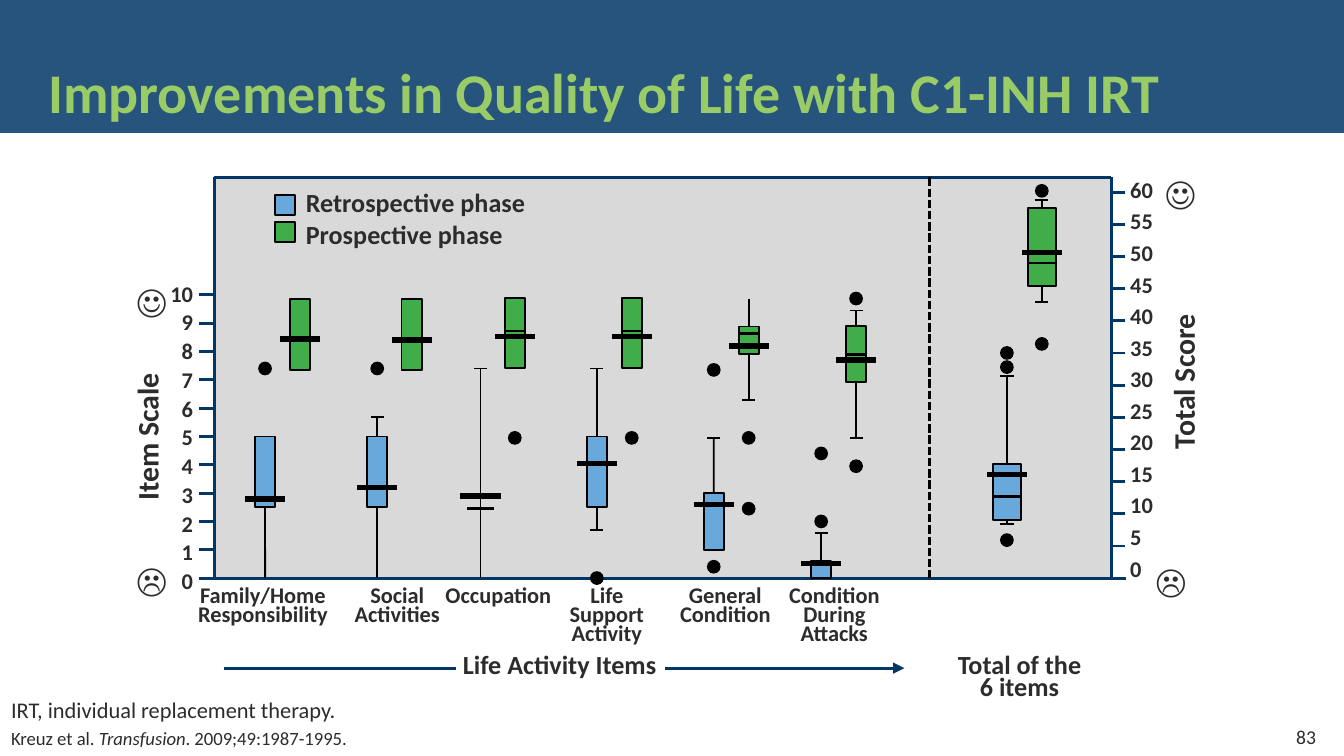
from dataclasses import dataclass

from lxml import etree
from pptx import Presentation
from pptx.dml.color import RGBColor
from pptx.enum.dml import MSO_LINE
from pptx.enum.shapes import MSO_CONNECTOR, MSO_SHAPE
from pptx.enum.text import MSO_ANCHOR, MSO_AUTO_SIZE, PP_ALIGN
from pptx.oxml.ns import qn
from pptx.util import Cm, Pt

STRAIGHT = MSO_CONNECTOR.STRAIGHT
RECTANGLE, OVAL = MSO_SHAPE.RECTANGLE, MSO_SHAPE.OVAL
LEFT, CENTER, RIGHT = PP_ALIGN.LEFT, PP_ALIGN.CENTER, PP_ALIGN.RIGHT
TOP, MIDDLE, BOTTOM = MSO_ANCHOR.TOP, MSO_ANCHOR.MIDDLE, MSO_ANCHOR.BOTTOM
DASH = MSO_LINE.SQUARE_DOT
NAVY, INK, BLACK, GRAY = "003767", "2C2C2C", "000000", "D9D9D9"
BLUE, GREEN, LIME = "68A8DB", "41AD49", "99CC67"
ITEM_UNIT, TOTAL_UNIT = 0.535, 0.1215


@dataclass
class Group:
    x: float
    color: str
    quartiles: tuple
    mean: float
    median: float = None
    whiskers: tuple = (None, None)
    outliers: tuple = ()


ITEM_GROUPS = [
    Group(0.96, BLUE, (2.5, 5), 2.8, whiskers=(0, None), outliers=(7.4,)),
    Group(3.08, BLUE, (2.5, 5), 3.2, whiskers=(0, 5.7), outliers=(7.4,)),
    Group(5.03, BLUE, None, 2.9, 2.45, (0, 7.4)),
    Group(7.23, BLUE, (2.5, 5), 4.05, whiskers=(1.7, 7.4), outliers=(0,)),
    Group(9.44, BLUE, (1, 3), 2.6, whiskers=(None, 4.95), outliers=(7.35, 0.4)),
    Group(11.47, BLUE, (0, 0.6), 0.52, whiskers=(None, 1.6), outliers=(4.4, 2)),
    Group(1.62, GREEN, (7.36, 9.87), 8.44),
    Group(3.73, GREEN, (7.36, 9.87), 8.4),
    Group(5.68, GREEN, (7.4, 9.9), 8.53, 8.72, outliers=(4.95,)),
    Group(7.89, GREEN, (7.4, 9.9), 8.53, 8.72, outliers=(4.95,)),
    Group(10.1, GREEN, (7.9, 8.88), 8.2, 8.63, (6.3, 9.87), (4.95, 2.45)),
    Group(12.13, GREEN, (6.92, 8.9), 7.7, 7.9, (4.95, 9.45), (9.87, 3.95)),
]
TOTAL_GROUPS = [
    Group(14.98, BLUE, (9, 17.8), 16.1, 12.7, (8.4, 31.4), (35, 32.8, 5.9)),
    Group(15.64, GREEN, (45.4, 57.5), 50.6, 49, (42.9, 58.8), (36.4, 60.2)),
]


def color(hex_code):
    return RGBColor.from_string(hex_code)


def add_shape(page, kind, frame, fill, line=None):
    shape = page.shapes.add_shape(kind, *map(Cm, frame))
    shape.shadow.inherit = False
    shape.fill.solid()
    shape.fill.fore_color.rgb = color(fill)
    if line:
        shape.line.color.rgb = color(line)
        shape.line.width = Pt(1)
    else:
        shape.line.fill.background()
    return shape


def add_line(page, x1, y1, x2, y2, width=1.5, ink=NAVY):
    line = page.shapes.add_connector(STRAIGHT, Cm(x1), Cm(y1), Cm(x2), Cm(y2))
    line.line.color.rgb = color(ink)
    line.line.width = Pt(width)
    etree.SubElement(line.element.spPr, qn("a:effectLst"))
    return line


def add_bar(page, x, y, length, width):
    return add_line(page, x - length / 2, y, x + length / 2, y, width, BLACK)


def add_span(para, text, size, ink=INK, bold=False, italic=False):
    span = para.add_run()
    span.text = text
    font = span.font
    font.name, font.size, font.bold, font.italic = "Calibri", Pt(size), bold, italic
    font.color.rgb = color(ink)
    return span


def add_text(page, frame, lines, size, bold=True, align=LEFT, anchor=TOP,
             wrap=False, after=None, spacing=None, rotation=0):
    box = page.shapes.add_textbox(*map(Cm, frame))
    box.rotation = rotation
    text = box.text_frame
    text.word_wrap, text.vertical_anchor = wrap, anchor
    for index, line in enumerate(lines):
        para = text.add_paragraph() if index else text.paragraphs[0]
        para.alignment, para.line_spacing = align, spacing
        if after:
            para.space_after = Pt(after)
        add_span(para, line, size, bold=bold)
    return box


def draw_header(page, left, top, width, height):
    band = add_shape(page, RECTANGLE, (left, top, width, height), NAVY)
    fill = band.element.spPr.find(qn("a:solidFill"))
    etree.SubElement(fill[0], qn("a:alpha"), val="85000")
    title = page.shapes.title
    title.element.addprevious(band.element)
    title.left, title.top = Cm(left + 0.66), Cm(top + 0.64)
    title.width, title.height = Cm(22.71), Cm(height - 0.64)
    text = title.text_frame
    text.auto_size, text.vertical_anchor = MSO_AUTO_SIZE.NONE, BOTTOM
    para = text.paragraphs[0]
    para.alignment, para.line_spacing = LEFT, 0.9
    span = add_span(para, "Improvements in Quality of Life with C1-INH IRT", 30, LIME, True)
    effects = etree.Element(qn("a:effectLst"))
    shadow = etree.SubElement(effects, qn("a:outerShdw"), blurRad="38100",
                              dist="38100", dir="2700000", algn="tl")
    shade = etree.SubElement(shadow, qn("a:srgbClr"), val=BLACK)
    etree.SubElement(shade, qn("a:alpha"), val="43000")
    span.font._element.find(qn("a:solidFill")).addnext(effects)


def draw_group(page, group, left, floor, unit, limit, box_width):
    x = left + group.x
    low, high = group.whiskers
    stem = None
    if low is not None or high is not None:
        start = high if high is not None else group.quartiles[0]
        end = low if low is not None else group.quartiles[1]
        stem = add_line(page, x, floor - start * unit, x, floor - end * unit, 1, BLACK)
        for value in group.whiskers:
            if value and value < limit:
                add_bar(page, x, floor - value * unit, 0.25, 1)
    if group.quartiles:
        bottom, top = group.quartiles
        frame = (x - box_width / 2, floor - top * unit, box_width, (top - bottom) * unit)
        box = add_shape(page, RECTANGLE, frame, group.color, BLACK)
        if stem and high is None:
            stem.begin_connect(box, 2)
        if stem and low is None:
            stem.end_connect(box, 0)
    if group.median is not None:
        length = box_width if group.quartiles else 0.5
        add_bar(page, x, floor - group.median * unit, length, 1.5)
    add_bar(page, x, floor - group.mean * unit, 0.76, 3)
    for value in group.outliers:
        add_shape(page, OVAL, (x - 0.13, floor - value * unit - 0.13, 0.26, 0.26), BLACK)


def draw_plot(page, left, top, width, height):
    right, floor = left + width, top + height
    add_shape(page, RECTANGLE, (left, top, width, height), GRAY)
    for x in (left, right):
        add_line(page, x, top, x, floor)
    add_line(page, left, top, right, top)
    add_line(page, left - 0.28, floor, right + 0.28, floor)
    for value in range(1, 11):
        y = floor - value * ITEM_UNIT
        add_line(page, left - 0.28, y, left, y)
    for value in range(5, 61, 5):
        y = floor - value * TOTAL_UNIT
        add_line(page, right, y, right + 0.26, y)
    divider = add_line(page, left + 13.52, top, left + 13.52, floor, ink=BLACK)
    divider.line.dash_style = DASH
    for y, fill in ((0.33, BLUE), (0.84, GREEN)):
        add_shape(page, RECTANGLE, (left + 1.15, top + y, 0.38, 0.38), fill, BLACK)
    add_text(page, (left + 1.48, top + 0.05, 4.7, 1.45),
             ["Retrospective phase", "Prospective phase"], 14)
    for group in ITEM_GROUPS:
        draw_group(page, group, left, floor, ITEM_UNIT, 9.8, 0.38)
    for group in TOTAL_GROUPS:
        draw_group(page, group, left, floor, TOTAL_UNIT, 60, 0.53)


def draw_scales(page, left, top, right):
    add_text(page, (left - 1.09, top + 1.81, 0.94, 6.25),
             [str(value) for value in range(10, -1, -1)], 12, align=RIGHT, after=1)
    add_text(page, (right + 0.11, top - 0.15, 0.94, 8.2),
             [str(value) for value in range(60, -1, -5)], 12, after=2.5)
    for x, y, width, name in ((left - 2.71, top + 4.47, 2.95, "Item Scale"),
                              (right - 0.15, top + 3.43, 3.1, "Total Score")):
        add_text(page, (x, y, width, 0.86), [name], 16, align=CENTER,
                 anchor=BOTTOM, spacing=0.9, rotation=270)
    for x, y, face in ((left - 1.72, top + 1.81, "☺"), (left - 1.72, top + 7.09, "☹"),
                       (right + 0.77, top - 0.23, "☺"), (right + 0.59, top + 7.11, "☹")):
        add_text(page, (x, y, 1.07, 1.02), [face], 18)


def draw_categories(page, left, top, width, height):
    columns = (1.27, 3.81, 5.72, 7.77, 10.01, 12.07)
    total = 15.57
    rows = [
        (columns, 12, "\tFamily/Home\tSocial\tOccupation\tLife\tGeneral\tCondition"),
        (columns, 12, "\tResponsibility\tActivities\t\tSupport\tCondition\tDuring"),
        (columns, 12, "\t\t\t\tActivity\t\tAttacks"),
        ((6.88, total), 14, "\tLife Activity Items\tTotal of the"),
        ((total,), 14, "\t6 items"),
    ]
    box = page.shapes.add_textbox(Cm(left), Cm(top), Cm(width), Cm(height))
    text = box.text_frame
    text.word_wrap = True
    for index, (stops, size, line) in enumerate(rows):
        para = text.add_paragraph() if index else text.paragraphs[0]
        tabs = etree.SubElement(para._p.get_or_add_pPr(), qn("a:tabLst"))
        for stop in stops:
            etree.SubElement(tabs, qn("a:tab"), pos=str(Cm(stop)), algn="ctr")
        para.line_spacing = 0.7
        if index == 3:
            para.space_before = Pt(6)
        add_span(para, line, size, bold=True)
    y = top + 1.62
    add_line(page, left + 0.79, y, left + 5.16, y)
    arrow = add_line(page, left + 9.12, y, left + 13.64, y)
    etree.SubElement(arrow.line._get_or_add_ln(), qn("a:tailEnd"), type="triangle")


def draw_footer(page, left, top, width, height):
    add_text(page, (left, top, 10.1, 0.76), ["IRT, individual replacement therapy."],
             12, bold=False, wrap=True)
    source = add_text(page, (left, top + 0.56, 11.9, height - 0.56), ["Kreuz et al. "],
                      10, bold=False, anchor=BOTTOM, wrap=True)
    para = source.text_frame.paragraphs[0]
    add_span(para, "Transfusion", 10, italic=True)
    add_span(para, ". 2009;49:1987-1995.", 10)
    add_text(page, (left + width - 1.17, top + 0.51, 1.17, 0.76), ["83"], 10.5,
             bold=False, align=RIGHT, anchor=MIDDLE, wrap=True)


def main():
    deck = Presentation()
    deck.slide_width, deck.slide_height = Cm(25.4), Cm(14.28)
    page = deck.slides.add_slide(deck.slide_layouts[5])
    draw_header(page, 0, 0, 25.4, 2.51)
    draw_plot(page, 4.05, 3.35, 16.95, 7.57)
    draw_scales(page, 4.05, 3.35, 21)
    draw_categories(page, 3.45, 11, 17.98, 2.39)
    draw_footer(page, -0.04, 13.03, 25.16, 1.25)
    deck.save("out.pptx")


if __name__ == "__main__":
    main()
